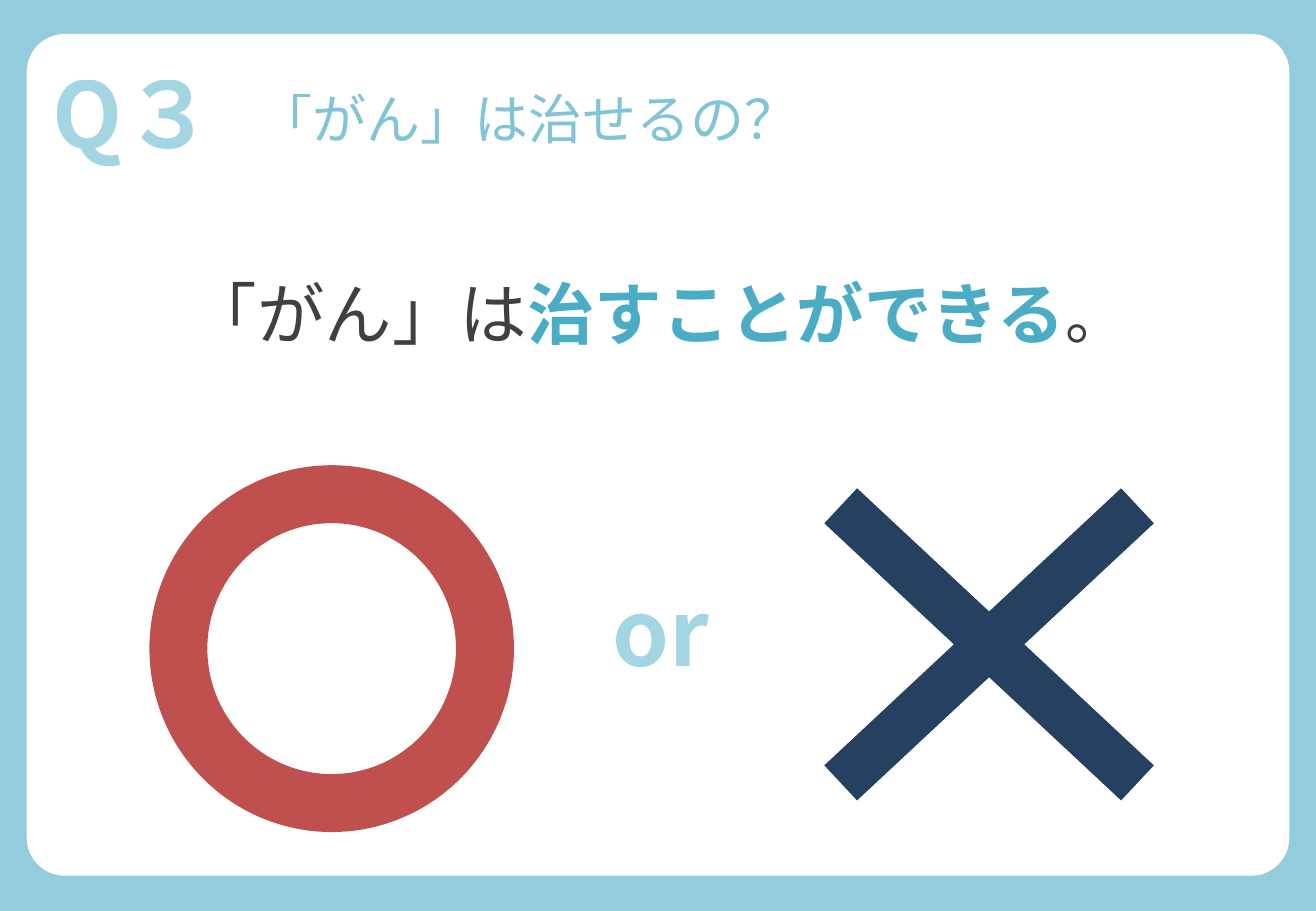
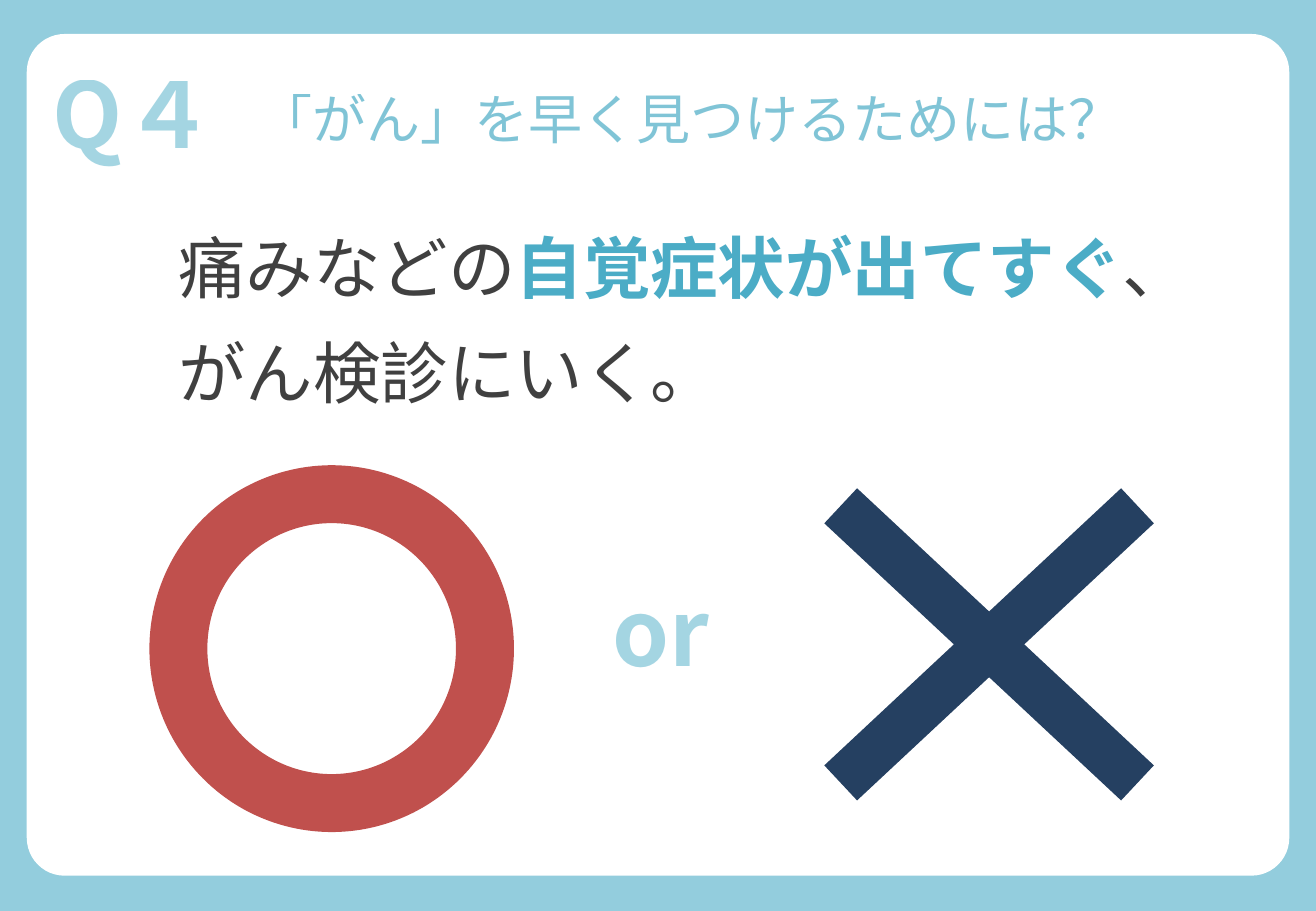
from lxml.etree import SubElement
from pptx import Presentation
from pptx.dml.color import RGBColor
from pptx.enum.shapes import MSO_SHAPE as Shape
from pptx.enum.text import MSO_ANCHOR as Anchor, PP_ALIGN as Align
from pptx.oxml.ns import qn
from pptx.util import Inches, Pt

COLORS = {"frame": "93CDDD", "card": "FFFFFF", "yes": "C0504D",
          "no": "254061", "accent": "4BACC6", "ink": "404040"}
FONT = "Noto Sans CJK JP"


class QuizDeck:
    """Quiz cards that share one style, built page by page."""

    def __init__(self):
        self.deck = Presentation()
        self.deck.slide_width = Inches(10.83)
        self.deck.slide_height = Inches(7.5)
        self.page = None

    def color(self, name):
        return RGBColor.from_string(COLORS[name])

    def new_page(self):
        self.page = self.deck.slides.add_slide(self.deck.slide_layouts[6])
        fill = self.page.background.fill
        fill.solid()
        fill.fore_color.rgb = self.color("frame")

    def shape(self, kind, place, color, adjustment):
        shape = self.page.shapes.add_shape(kind, *map(Inches, place))
        shape.adjustments[0] = adjustment
        shape.shadow.inherit = False
        shape.fill.solid()
        shape.fill.fore_color.rgb = self.color(color)
        shape.line.fill.background()

    def text(self, place, spans, align=Align.CENTER, spacing=None):
        box = self.page.shapes.add_textbox(*map(Inches, place))
        frame = box.text_frame
        frame.word_wrap = True
        frame.vertical_anchor = Anchor.MIDDLE
        para = frame.paragraphs[0]
        para.alignment = align
        if spacing:
            para.line_spacing = spacing
        for span in spans:
            self.span(para, *span)

    def span(self, para, words, size, color="accent", bold=False, opacity=100):
        run = para.add_run()
        run.text = words
        font = run.font
        font.size = Pt(size)
        font.bold = bold
        font.name = FONT
        font.color.rgb = self.color(color)
        properties = font._element
        SubElement(properties, qn("a:ea")).set("typeface", FONT)
        if opacity < 100:
            value = properties.find(".//" + qn("a:srgbClr"))
            SubElement(value, qn("a:alpha")).set("val", str(opacity * 1000))

    def faded_label(self, place, words):
        self.text(place, [(words, 54, "accent", True, 50)])

    def quiz(self, number, title, title_width, statement, place, align):
        self.new_page()
        self.shape(Shape.ROUNDED_RECTANGLE, (0.22, 0.28, 10.39, 6.93), "card", 0.045)
        self.shape(Shape.DONUT, (1.23, 3.83, 3, 3.02), "yes", 0.159)
        self.shape(Shape.MATH_MULTIPLY, (5.79, 3.11, 4.7, 4.39), "no", 0.09)
        self.faded_label((4.34, 4.46, 2.2, 1.45), "or")
        self.text((2.03, 0.56, title_width, 0.83),
                  [(title, 32, "accent", False, 70)], Align.LEFT)
        self.text(place, statement, align, 1.3)
        self.faded_label((0.25, 0.4, 1.7, 1.05), number)

    def save(self):
        self.deck.save("out.pptx")


def main():
    cards = QuizDeck()
    cards.quiz("Q３", "「がん」は治せるの？", 6.84,
               [("「がん」は", 40, "ink"),
                ("治すことができる", 40, "accent", True),
                ("。", 36, "ink")],
               (0.22, 1.86, 10.39, 1.22), Align.CENTER)
    cards.quiz("Q４", "「がん」を早く見つけるためには？", 8.03,
               [("痛みなどの", 40, "ink"),
                ("自覚症状が出てすぐ", 40, "accent", True),
                ("、がん検診にいく。", 40, "ink")],
               (1.37, 1.66, 8.7, 1.74), Align.LEFT)
    cards.save()


if __name__ == "__main__":
    main()
